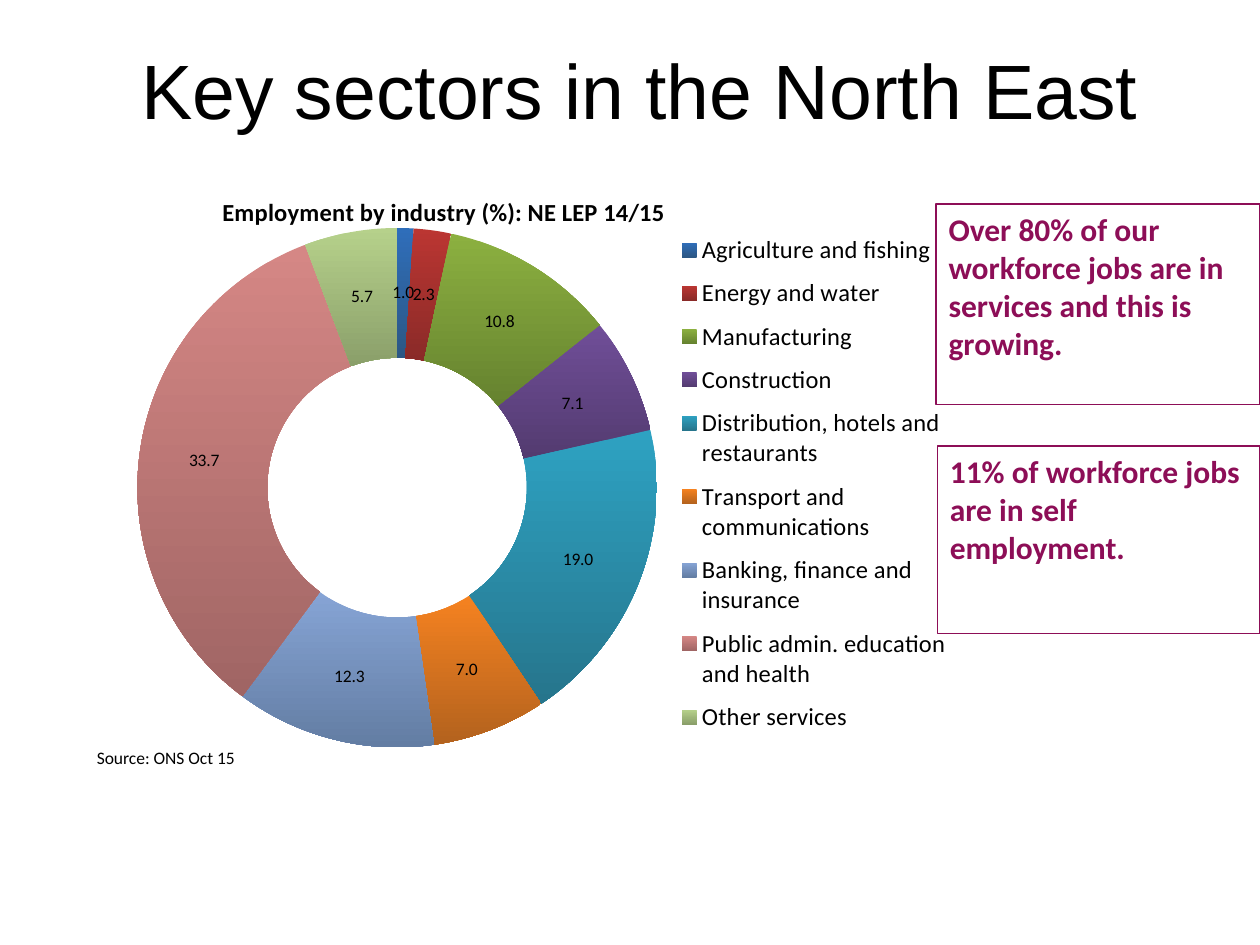
import pptx
import pptx.chart.data
import pptx.dml.color
import pptx.enum.chart
import pptx.enum.shapes
import pptx.enum.text
import pptx.oxml
import pptx.oxml.ns
import pptx.util

BLACK, PLUM = "000000", "8D0E57"

SECTORS = [
    ("Agriculture and fishing", 1.0, "2F6EBA", "2C5784"),
    ("Energy and water", 2.3, "BB3632", "8A2A28"),
    ("Manufacturing", 10.8, "8CB040", "65822F"),
    ("Construction", 7.1, "704E98", "533B70"),
    ("Distribution, hotels and restaurants", 19.0, "2EA2C2", "26758C"),
    ("Transport and communications", 7.0, "F58220", "B3621E"),
    ("Banking, finance and insurance", 12.3, "86A4D5", "637DA3"),
    ("Public admin. education and health", 33.7, "D58785", "A06564"),
    ("Other services", 5.7, "B6D18B", "8A9F6A"),
]
EDGES = {"xMode": "edge", "yMode": "edge"}
PLOT_LAYOUT = {"layoutTarget": "inner", **EDGES, "x": 0.067, "y": 0.081, "w": 0.62, "h": 0.902}
LEGEND_LAYOUT = {**EDGES, "x": 0.67, "y": 0.07, "w": 0.33, "h": 0.91}
TITLE_LAYOUT = {**EDGES, "x": 0.18, "y": 0.015}


def rgb(value):
    return pptx.dml.color.RGBColor.from_string(value)


def set_attributes(target, values):
    for name, value in values.items():
        setattr(target, name, value)


def format_font(font, size, colour=BLACK, name="Calibri", bold=False):
    set_attributes(font, {"size": pptx.util.Pt(size), "name": name, "bold": bold})
    font.color.rgb = rgb(colour)


def inches(box):
    return [pptx.util.Inches(length) for length in box]


def write_text(frame, text, size, align=pptx.enum.text.PP_ALIGN.LEFT,
               anchor=pptx.enum.text.MSO_ANCHOR.TOP, **font_values):
    set_attributes(frame, {"word_wrap": True, "vertical_anchor": anchor})
    paragraph = frame.paragraphs[0]
    paragraph.alignment = align
    run = paragraph.add_run()
    run.text = text
    format_font(run.font, size, **font_values)


def place_heading(slide, box, text):
    heading = slide.shapes.title
    set_attributes(heading, dict(zip(("left", "top", "width", "height"), inches(box))))
    write_text(heading.text_frame, text, 44, pptx.enum.text.PP_ALIGN.CENTER,
               pptx.enum.text.MSO_ANCHOR.MIDDLE, name="Arial")


def add_callout(slide, box, text):
    callout = slide.shapes.add_shape(pptx.enum.shapes.MSO_SHAPE.RECTANGLE, *inches(box))
    callout.shadow.inherit = False
    callout.fill.background()
    callout.line.color.rgb = rgb(PLUM)
    callout.line.width = pptx.util.Pt(0.75)
    write_text(callout.text_frame, text, 18, colour=PLUM, bold=True)


def add_source(slide, box, text):
    source = slide.shapes.add_textbox(*inches(box))
    write_text(source.text_frame, text, 10)
    source.text_frame.auto_size = pptx.enum.text.MSO_AUTO_SIZE.SHAPE_TO_FIT_TEXT


def place_chart_part(part, position, layout):
    for old_layout in part.findall(pptx.oxml.ns.qn("c:layout")):
        part.remove(old_layout)
    settings = "".join(f'<c:{key} val="{value}"/>' for key, value in layout.items())
    part.insert(position, pptx.oxml.parse_xml(
        f'<c:layout {pptx.oxml.ns.nsdecls("c")}>'
        f"<c:manualLayout>{settings}</c:manualLayout></c:layout>"))


def shade_sector(point, top_colour, bottom_colour):
    fill = point.format.fill
    fill.gradient()
    fill.gradient_angle = 270
    for stop, colour in zip(fill.gradient_stops, (top_colour, bottom_colour)):
        stop.color.rgb = rgb(colour)
    point.format.line.fill.background()


def add_employment_chart(slide, box, title):
    employment = pptx.chart.data.CategoryChartData(number_format="#,##0.0")
    employment.categories = [sector[0] for sector in SECTORS]
    employment.add_series("Series 1", [sector[1] for sector in SECTORS])
    chart = slide.shapes.add_chart(
        pptx.enum.chart.XL_CHART_TYPE.DOUGHNUT, *inches(box), employment).chart
    format_font(chart.font, 10)

    chart.has_title = True
    title_run = chart.chart_title.text_frame.paragraphs[0].add_run()
    title_run.text = title
    format_font(title_run.font, 14, bold=True)

    chart.has_legend = True
    set_attributes(chart.legend, {
        "position": pptx.enum.chart.XL_LEGEND_POSITION.RIGHT,
        "include_in_layout": False,
    })
    format_font(chart.legend.font, 14)

    plot = chart.plots[0]
    set_attributes(plot, {"vary_by_categories": True, "has_data_labels": True})
    set_attributes(plot.data_labels, {
        "show_value": True, "show_percentage": False,
        "number_format": "#,##0.0", "number_format_is_linked": False,
    })
    format_font(plot.data_labels.font, 10)
    for index, (_, _, top_colour, bottom_colour) in enumerate(SECTORS):
        shade_sector(plot.series[0].points[index], top_colour, bottom_colour)

    place_chart_part(plot._element.getparent(), 0, PLOT_LAYOUT)
    place_chart_part(chart.legend._element, 1, LEGEND_LAYOUT)
    place_chart_part(chart.chart_title._element, 1, TITLE_LAYOUT)


def main():
    presentation = pptx.Presentation()
    set_attributes(presentation, {
        "slide_width": pptx.util.Inches(10), "slide_height": pptx.util.Inches(7.5),
    })
    slide = presentation.slides.add_slide(presentation.slide_layouts[5])
    place_heading(slide, (0.59, 0.21, 8.98, 0.99), "Key sectors in the North East")
    add_callout(slide, (7.43, 1.62, 2.57, 1.59),
                "Over 80% of our workforce jobs are in services and this is growing.")
    add_callout(slide, (7.44, 3.54, 2.56, 1.49),
                "11% of workforce jobs are in self employment.")
    add_source(slide, (0.67, 5.88, 2.2, 0.27), "Source: ONS Oct 15")
    add_employment_chart(slide, (0.43, 1.44, 7.22, 4.57),
                         "Employment by industry (%): NE LEP 14/15")
    presentation.save("out.pptx")


if __name__ == "__main__":
    main()
